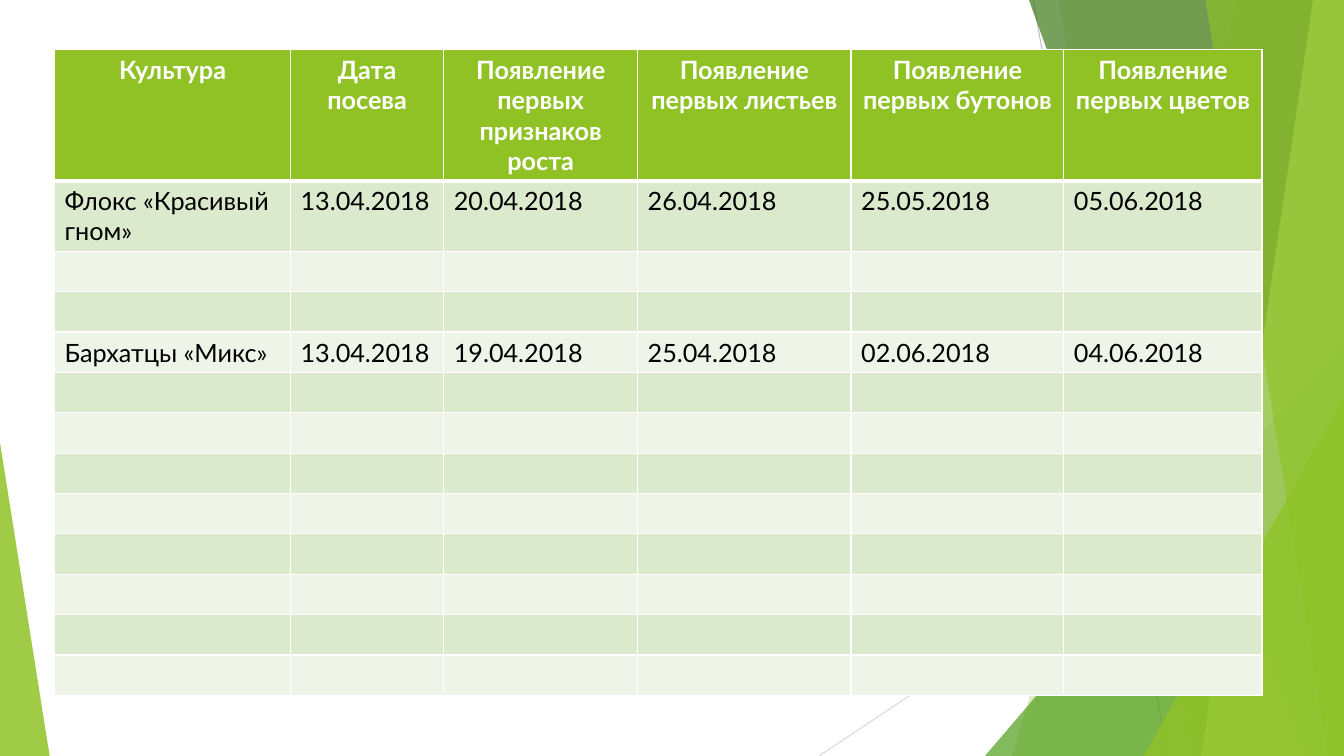
from lxml.etree import SubElement
from pptx import Presentation
from pptx.dml.color import RGBColor
from pptx.enum.shapes import MSO_CONNECTOR, MSO_SHAPE
from pptx.enum.text import PP_ALIGN
from pptx.oxml.ns import qn
from pptx.util import Pt

LIME = RGBColor(0x90, 0xC2, 0x26)
GREEN = RGBColor(0x54, 0xA0, 0x21)
DARK = RGBColor(0x3F, 0x78, 0x19)
PALE = RGBColor(0xC0, 0xE4, 0x74)
BAND = RGBColor(0xDB, 0xE9, 0xCD)
LIGHT = RGBColor(0xEE, 0xF4, 0xE8)
GRAY = RGBColor(0xBF, 0xBF, 0xBF)
SILVER = RGBColor(0xD9, 0xD9, 0xD9)
WHITE = RGBColor(0xFF, 0xFF, 0xFF)
BLACK = RGBColor(0, 0, 0)

FONT = "Lato"
SIZE = 18
LINE = SIZE * 1.2  # height of one text line
PAD = 7.2  # top and bottom cell margins together

HEADS = ["Культура", "Дата посева", "Появление первых признаков роста",
         "Появление первых листьев", "Появление первых бутонов",
         "Появление первых цветов"]
DATA = {
    1: ["Флокс «Красивый гном»", "13.04.2018", "20.04.2018", "26.04.2018",
        "25.05.2018", "05.06.2018"],
    4: ["Бархатцы «Микс»", "13.04.2018", "19.04.2018", "25.04.2018",
        "02.06.2018", "04.06.2018"],
}
ROWS = 13
COLS = [168.5, 109.5, 138.5, 152.5, 152, 141.6]
LINES = {0: 4, 1: 2}  # text lines per row, otherwise one


def paint(shape, color, alpha):
    shape.shadow.inherit = False
    shape.fill.solid()
    shape.fill.fore_color.rgb = color
    shape.line.fill.background()
    tint = shape._element.spPr.find(qn("a:solidFill")).find(qn("a:srgbClr"))
    SubElement(tint, qn("a:alpha"), val=str(alpha * 1000))


def ray(slide, start, end, color):
    line = slide.shapes.add_connector(
        MSO_CONNECTOR.STRAIGHT, *[Pt(v) for v in start + end])
    line.line.color.rgb = color
    line.line.width = Pt(0.75)
    SubElement(line._element.spPr, qn("a:effectLst"))


def facet(slide, box, upper, lower, color, alpha):
    """Slanted panel that reaches the right edge of the box."""
    left, top, width, height = box
    right, base = left + width, top + height
    spots = [(right, top), (right, base), (left + lower, base)]
    form = slide.shapes.build_freeform(Pt(left + upper), Pt(top))
    form.add_line_segments([(Pt(x), Pt(y)) for x, y in spots])
    paint(form.convert_to_shape(), color, alpha)


def wedge(slide, box, width, height, apex, color, alpha):
    """Right triangle in a bottom corner: apex 0 is left, 1 is right."""
    left = box[0] + apex * (box[2] - width)
    top = box[1] + box[3] - height
    shape = slide.shapes.add_shape(
        MSO_SHAPE.ISOSCELES_TRIANGLE, Pt(left), Pt(top), Pt(width), Pt(height))
    shape.adjustments[0] = apex
    paint(shape, color, alpha)


def backdrop(slide, box):
    left, top, width, height = box
    base = top + height
    # Thin lines
    ray(slide, (left + 738, top), (left + 834, base), GRAY)
    ray(slide, (left + width, top + 290), (left + 585, base), SILVER)
    # Overlapping facets, back to front
    facet(slide, box, 884, 723, LIME, 30)
    facet(slide, box, 756, 852, LIME, 20)
    wedge(slide, box, 256.5, 300, 1, GREEN, 72)
    facet(slide, box, 735, 930, DARK, 70)
    facet(slide, box, 938, 858, PALE, 70)
    facet(slide, box, 861, 949, LIME, 65)
    wedge(slide, box, 143, 257, 1, LIME, 80)
    wedge(slide, box, 35.5, 224, 0, LIME, 85)


def border(cell, row):
    props = cell._tc.get_or_add_tcPr()
    thick = {"T": 3 if row == 1 else 1, "B": 3 if row == 0 else 1}
    for side in "LRTB":
        edge = SubElement(props, qn("a:ln" + side),
                          w=str(Pt(thick.get(side, 1))))
        SubElement(SubElement(edge, qn("a:solidFill")),
                   qn("a:srgbClr"), val=str(WHITE))


def write(cell, text, head):
    para = cell.text_frame.paragraphs[0]
    if not text:  # an empty cell keeps the height of one line
        end = SubElement(para._p, qn("a:endParaRPr"), sz=str(SIZE * 100))
        SubElement(end, qn("a:latin"), typeface=FONT)
        return
    para.alignment = PP_ALIGN.CENTER if head else PP_ALIGN.LEFT
    run = para.add_run()
    run.text = text
    look = {"name": FONT, "size": Pt(SIZE), "bold": head}
    for key, value in look.items():
        setattr(run.font, key, value)
    run.font.color.rgb = WHITE if head else BLACK


def diary(slide, box):
    """Table of sowing and growth dates."""
    frame = slide.shapes.add_table(ROWS, len(COLS), *[Pt(v) for v in box])
    table = frame.table
    for col, width in zip(table.columns, COLS):
        col.width = Pt(width)
    for i, row in enumerate(table.rows):
        row.height = Pt(LINES.get(i, 1) * LINE + PAD)
        texts = HEADS if i == 0 else DATA.get(i, [""] * len(COLS))
        for cell, text in zip(row.cells, texts):
            border(cell, i)
            cell.fill.solid()
            cell.fill.fore_color.rgb = (
                LIME if i == 0 else BAND if i % 2 else LIGHT)
            write(cell, text, i == 0)


def main():
    deck = Presentation()
    deck.slide_width, deck.slide_height = Pt(960), Pt(540)
    slide = deck.slides.add_slide(deck.slide_layouts[6])
    backdrop(slide, (0, 0, 960, 540))
    diary(slide, (39, 35.5, sum(COLS), 460.8))
    deck.save("out.pptx")


if __name__ == "__main__":
    main()
